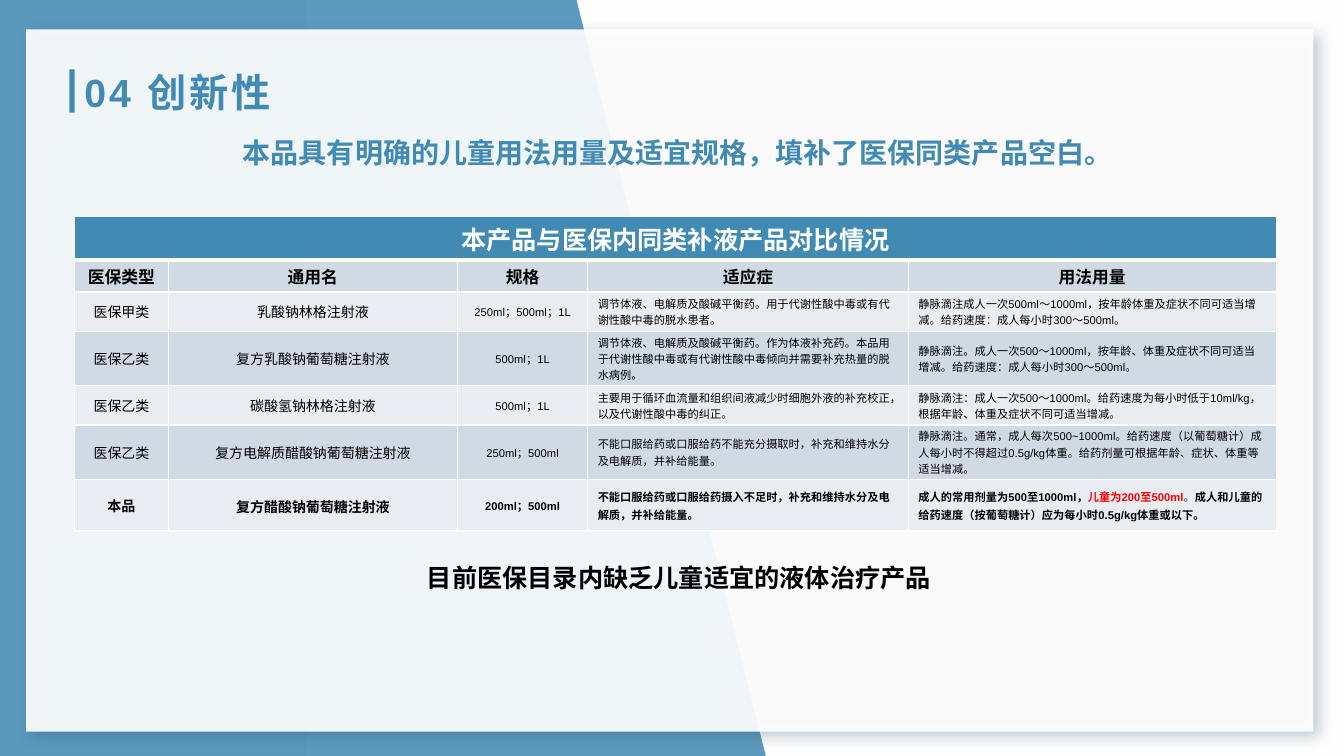
from dataclasses import dataclass

from lxml import etree
from pptx import Presentation
from pptx import util as u
from pptx.dml.color import RGBColor
from pptx.enum import lang, shapes, text
from pptx.oxml import ns


@dataclass(frozen=True)
class Theme:
    font: str = "Arial"
    blue: str = "418AB3"
    white: str = "FFFFFF"
    black: str = "000000"
    red: str = "FF0000"
    page: str = "F0F0F0"
    shade: str = "20455A"
    band_dark: str = "CFDAE5"
    band_light: str = "E9EDF2"
    title: float = 28
    claim: float = 20
    caption: float = 18
    heading: float = 12
    label: float = 10
    detail: float = 8


@dataclass(frozen=True)
class Area:
    left: float
    top: float
    width: float
    height: float

    def lengths(self) -> list:
        return [u.Cm(value) for value in (self.left, self.top, self.width, self.height)]


@dataclass(frozen=True)
class Span:
    words: str
    color: str


@dataclass(frozen=True)
class Style:
    size: float
    color: str
    bold: bool = True
    align: text.PP_ALIGN = text.PP_ALIGN.CENTER
    spacing: float = 1.0
    tracking: int = 0


@dataclass(frozen=True)
class Line:
    area: Area
    words: str
    style: Style


@dataclass(frozen=True)
class Polygon:
    points: tuple
    color: str
    alpha: int


THEME = Theme()
WIDTH, HEIGHT = 33.87, 19.05
POLYGONS = (
    Polygon(((7.72, 0), (WIDTH, 0), (WIDTH, HEIGHT), (7.72, HEIGHT)), THEME.white, 95),
    Polygon(((0, 0), (14.53, 0), (19.3, HEIGHT), (0, HEIGHT)), THEME.blue, 85),
)
PANEL = Area(0.66, 0.74, 32.44, 17.7)
BAR = Area(1.75, 1.75, 0.13, 1.09)
LINES = (
    Line(Area(1.88, 1.57, 13.36, 1.47), "04 创新性",
         Style(THEME.title, THEME.blue, align=text.PP_ALIGN.LEFT, tracking=200)),
    Line(Area(1.88, 3.28, 30.4, 1.12), "本品具有明确的儿童用法用量及适宜规格，填补了医保同类产品空白。",
         Style(THEME.claim, THEME.blue)),
    Line(Area(8.64, 14.05, 16.94, 1.02), "目前医保目录内缺乏儿童适宜的液体治疗产品",
         Style(THEME.caption, THEME.black)),
)
TABLE = Area(1.88, 5.46, 30.28, 7.92)
COLUMNS = (2.36, 7.29, 3.28, 8.08, 9.27)
ROWS = (1.09, 0.81, 0.99, 1.37, 0.99, 1.37, 1.3)
CAPTION = "本产品与医保内同类补液产品对比情况"
PRODUCT_DOSE = (
    Span("成人的常用剂量为500至1000ml，", THEME.black),
    Span("儿童为200至500ml", THEME.red),
    Span("。", THEME.blue),
    Span("成人和儿童的给药速度（按葡萄糖计）应为每小时0.5g/kg体重或以下。", THEME.black),
)
RECORDS = (
    ("医保类型", "通用名", "规格", "适应症", "用法用量"),
    ("医保甲类", "乳酸钠林格注射液", "250ml；500ml；1L",
     "调节体液、电解质及酸碱平衡药。用于代谢性酸中毒或有代谢性酸中毒的脱水患者。",
     "静脉滴注成人一次500ml～1000ml，按年龄体重及症状不同可适当增减。给药速度：成人每小时300～500ml。"),
    ("医保乙类", "复方乳酸钠葡萄糖注射液", "500ml；1L",
     "调节体液、电解质及酸碱平衡药。作为体液补充药。本品用于代谢性酸中毒或有代谢性酸中毒倾向并需要补充热量的脱水病例。",
     "静脉滴注。成人一次500～1000ml，按年龄、体重及症状不同可适当增减。给药速度：成人每小时300～500ml。"),
    ("医保乙类", "碳酸氢钠林格注射液", "500ml；1L",
     "主要用于循环血流量和组织间液减少时细胞外液的补充校正，以及代谢性酸中毒的纠正。",
     "静脉滴注：成人一次500〜1000ml。给药速度为每小时低于10ml/kg，根据年龄、体重及症状不同可适当增减。"),
    ("医保乙类", "复方电解质醋酸钠葡萄糖注射液", "250ml；500ml",
     "不能口服给药或口服给药不能充分摄取时，补充和维持水分及电解质，并补给能量。",
     "静脉滴注。通常，成人每次500~1000ml。给药速度（以葡萄糖计）成人每小时不得超过0.5g/kg体重。给药剂量可根据年龄、症状、体重等适当增减。"),
    ("本品", "复方醋酸钠葡萄糖注射液", "200ml；500ml",
     "不能口服给药或口服给药摄入不足时，补充和维持水分及电解质，并补给能量。", PRODUCT_DOSE),
)


def add_child(parent, tag: str, **attributes):
    return etree.SubElement(parent, ns.qn(tag), {key: str(value) for key, value in attributes.items()})


def paint(shape, color: str, alpha: int = 100) -> None:
    shape.shadow.inherit = False
    shape.line.fill.background()
    shape.fill.solid()
    shape.fill.fore_color.rgb = RGBColor.from_string(color)
    if alpha < 100:
        add_child(shape.fill._xPr.find(".//" + ns.qn("a:srgbClr")), "a:alpha", val=alpha * 1000)


def draw_polygon(page, polygon: Polygon) -> None:
    start, *others = [(u.Cm(x), u.Cm(y)) for x, y in polygon.points]
    builder = page.shapes.build_freeform(*start)
    builder.add_line_segments(others)
    paint(builder.convert_to_shape(), polygon.color, polygon.alpha)


def draw_rectangle(page, area: Area, color: str, alpha: int = 100):
    shape = page.shapes.add_shape(shapes.MSO_SHAPE.RECTANGLE, *area.lengths())
    paint(shape, color, alpha)
    return shape


def cast_shadow(shape) -> None:
    effects = shape._element.spPr.find(ns.qn("a:effectLst"))
    shadow = add_child(effects, "a:outerShdw", blurRad=u.Pt(10), dist=u.Pt(6), dir=45 * 60000,
                       algn="tl", rotWithShape=0)
    add_child(add_child(shadow, "a:srgbClr", val=THEME.shade), "a:alpha", val=30000)


def write(frame, spans: tuple, style: Style) -> None:
    para = frame.paragraphs[0]
    para.alignment = style.align
    if style.spacing != 1:
        para.line_spacing = style.spacing
    for span in spans:
        run = para.add_run()
        run.text = span.words
        run.font.name = THEME.font
        run.font.size = u.Pt(style.size)
        run.font.bold = style.bold
        run.font.color.rgb = RGBColor.from_string(span.color)
        run.font.language_id = lang.MSO_LANGUAGE_ID.SIMPLIFIED_CHINESE
        if style.tracking:
            run.font._element.set("spc", str(style.tracking))


def draw_line(page, line: Line) -> None:
    frame = page.shapes.add_textbox(*line.area.lengths()).text_frame
    frame.word_wrap = True
    frame.vertical_anchor = text.MSO_ANCHOR.MIDDLE
    write(frame, (Span(line.words, line.style.color),), line.style)


def dress_cell(cell, row: int, color: str) -> None:
    cell.vertical_anchor = text.MSO_ANCHOR.MIDDLE
    cell.margin_top = cell.margin_bottom = 0
    weights = {"L": 1, "R": 1, "T": 3 if row == 1 else 1, "B": 3 if row == 0 else 1}
    for side, weight in weights.items():
        border = add_child(cell._tc.get_or_add_tcPr(), f"a:ln{side}", w=u.Pt(weight))
        add_child(add_child(border, "a:solidFill"), "a:srgbClr", val=THEME.white)
    cell.fill.solid()
    cell.fill.fore_color.rgb = RGBColor.from_string(color)


def cell_style(row: int, column: int) -> Style:
    if row == 1:
        return Style(THEME.heading, THEME.black)
    last = row == len(ROWS) - 1
    return Style(THEME.label if column < 2 else THEME.detail, THEME.black, last,
                 text.PP_ALIGN.CENTER if column < 3 else text.PP_ALIGN.LEFT,
                 1.1 if last and column else 1.0)


def draw_table(page) -> None:
    table = page.shapes.add_table(len(ROWS), len(COLUMNS), *TABLE.lengths()).table
    for column, width in zip(table.columns, COLUMNS):
        column.width = u.Cm(width)
    for row, height in zip(table.rows, ROWS):
        row.height = u.Cm(height)
    for column in range(len(COLUMNS)):
        dress_cell(table.cell(0, column), 0, THEME.blue)
    table.cell(0, 0).merge(table.cell(0, len(COLUMNS) - 1))
    write(table.cell(0, 0).text_frame, (Span(CAPTION, THEME.white),), Style(THEME.caption, THEME.white))
    for row, record in enumerate(RECORDS, 1):
        for column, words in enumerate(record):
            cell = table.cell(row, column)
            dress_cell(cell, row, THEME.band_dark if row % 2 else THEME.band_light)
            spans = (Span(words, THEME.black),) if isinstance(words, str) else words
            write(cell.text_frame, spans, cell_style(row, column))


def main() -> None:
    """Build the product comparison slide and save it."""
    deck = Presentation()
    deck.slide_width, deck.slide_height = u.Cm(WIDTH), u.Cm(HEIGHT)
    page = deck.slides.add_slide(deck.slide_layouts[6])
    page.background.fill.solid()
    page.background.fill.fore_color.rgb = RGBColor.from_string(THEME.page)
    for polygon in POLYGONS:
        draw_polygon(page, polygon)
    cast_shadow(draw_rectangle(page, PANEL, THEME.white, 92))
    draw_rectangle(page, BAR, THEME.blue)
    for line in LINES:
        draw_line(page, line)
    draw_table(page)
    deck.save("out.pptx")


if __name__ == "__main__":
    main()
